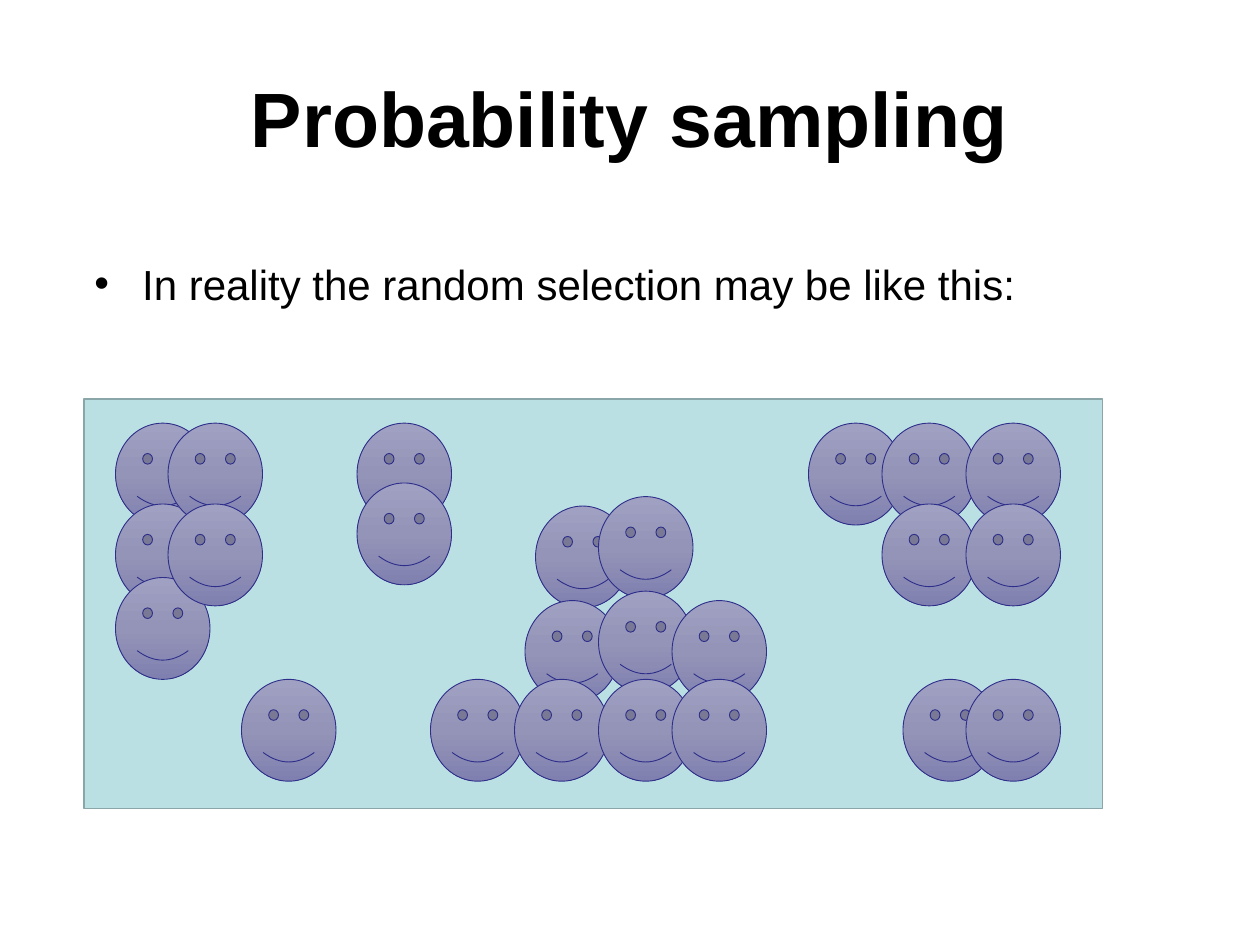
from copy import deepcopy

from lxml.etree import SubElement
from pptx import Presentation
from pptx.dml.color import RGBColor as Rgb
from pptx.enum.shapes import MSO_SHAPE as Shape
from pptx.enum.text import MSO_ANCHOR as Anchor, PP_ALIGN as Align
from pptx.oxml.ns import qn
from pptx.util import Inches, Pt

COLORS = {"text": "000000", "panel": "BBE0E3", "panel_edge": "8AA6A8", "face_edge": "2D2D8A",
          "face_top": "A0A0C3", "face_middle": "9494B8", "face_bottom": "8080B0"}
FONT = "Arial"
CELLS_PER_INCH = 12
TITLE_BOX = (6, 3.6, 108, 15)
STATEMENT_BOX = (7.8, 24, 101, 6.1)
POPULATION_BOX = (8, 38, 97, 39)
FACE_SIZE = (9, 9.7)
TOP, UPPER, BOTTOM = 2.3, 10, 26.7
PEOPLE = [
    (3, TOP), (3, UPPER), (3, 17), (8, TOP), (8, UPPER), (15, BOTTOM),
    (26, TOP), (26, 8), (33, BOTTOM),
    (43, 10.2), (42, 19.2), (41, BOTTOM), (49, 9.3), (49, 18.3), (49, BOTTOM),
    (69, TOP), (56, 19.2), (56, BOTTOM), (76, TOP), (76, UPPER),
    (78, BOTTOM), (84, TOP), (84, UPPER), (84, BOTTOM),
]


def color(name):
    """Return the palette colour with this name."""
    return Rgb.from_string(COLORS[name])


def grid(box):
    """Convert grid columns and rows to slide lengths."""
    return [Inches(cells / CELLS_PER_INCH) for cells in box]


def add_line_of_text(slide, box, wording, size, bold=False):
    """Add a wrapped text box and return its frame and paragraph."""
    frame = slide.shapes.add_textbox(*grid(box)).text_frame
    frame.word_wrap = True
    paragraph = frame.paragraphs[0]
    run = paragraph.add_run()
    run.text = wording
    run.font.name, run.font.size, run.font.bold = FONT, Pt(size), bold
    run.font.color.rgb = color("text")
    return frame, paragraph


def add_title(slide, box):
    """Add the centred heading."""
    frame, heading = add_line_of_text(slide, box, "Probability sampling", 44, True)
    frame.vertical_anchor = Anchor.MIDDLE
    heading.alignment = Align.CENTER


def add_statement(slide, box):
    """Add the bulleted statement with a hanging indent."""
    _, statement = add_line_of_text(
        slide, box, "In reality the random selection may be like this:", 24)
    properties = statement._p.get_or_add_pPr()
    properties.set("marL", str(Inches(0.38)))
    properties.set("indent", str(-Inches(0.38)))
    SubElement(properties, qn("a:buFont")).set("typeface", FONT)
    SubElement(properties, qn("a:buChar")).set("char", "•")


def add_outlined(slide, kind, box, edge, width):
    """Add a preset shape with a coloured outline and no shadow."""
    outlined = slide.shapes.add_shape(kind, *grid(box))
    outlined.shadow.inherit = False
    outlined.line.color.rgb = color(edge)
    outlined.line.width = Pt(width)
    return outlined


def add_person(slide, box):
    """Add one smiling face shaded from top to bottom."""
    face = add_outlined(slide, Shape.SMILEY_FACE, box, "face_edge", 0.5)
    face.fill.gradient()
    face.fill.gradient_angle = 270
    stop_list = face._element.spPr.find(qn("a:gradFill")).find(qn("a:gsLst"))
    stop_list.insert(1, deepcopy(stop_list[0]))
    shades = ("face_top", "face_middle", "face_bottom")
    for index, (stop, shade) in enumerate(zip(face.fill.gradient_stops, shades)):
        stop.position = index / 2
        stop.color.rgb = color(shade)


def add_population(slide, box):
    """Add the panel and the people placed within it."""
    panel = add_outlined(slide, Shape.RECTANGLE, box, "panel_edge", 1)
    panel.fill.solid()
    panel.fill.fore_color.rgb = color("panel")
    left, top = box[:2]
    for column, row in PEOPLE:
        add_person(slide, (left + column, top + row, *FACE_SIZE))


def main():
    """Build and save the slide."""
    deck = Presentation()
    deck.slide_width, deck.slide_height = Inches(10), Inches(7.5)
    slide = deck.slides.add_slide(deck.slide_layouts[6])
    add_title(slide, TITLE_BOX)
    add_statement(slide, STATEMENT_BOX)
    add_population(slide, POPULATION_BOX)
    deck.save("out.pptx")


if __name__ == "__main__":
    main()
